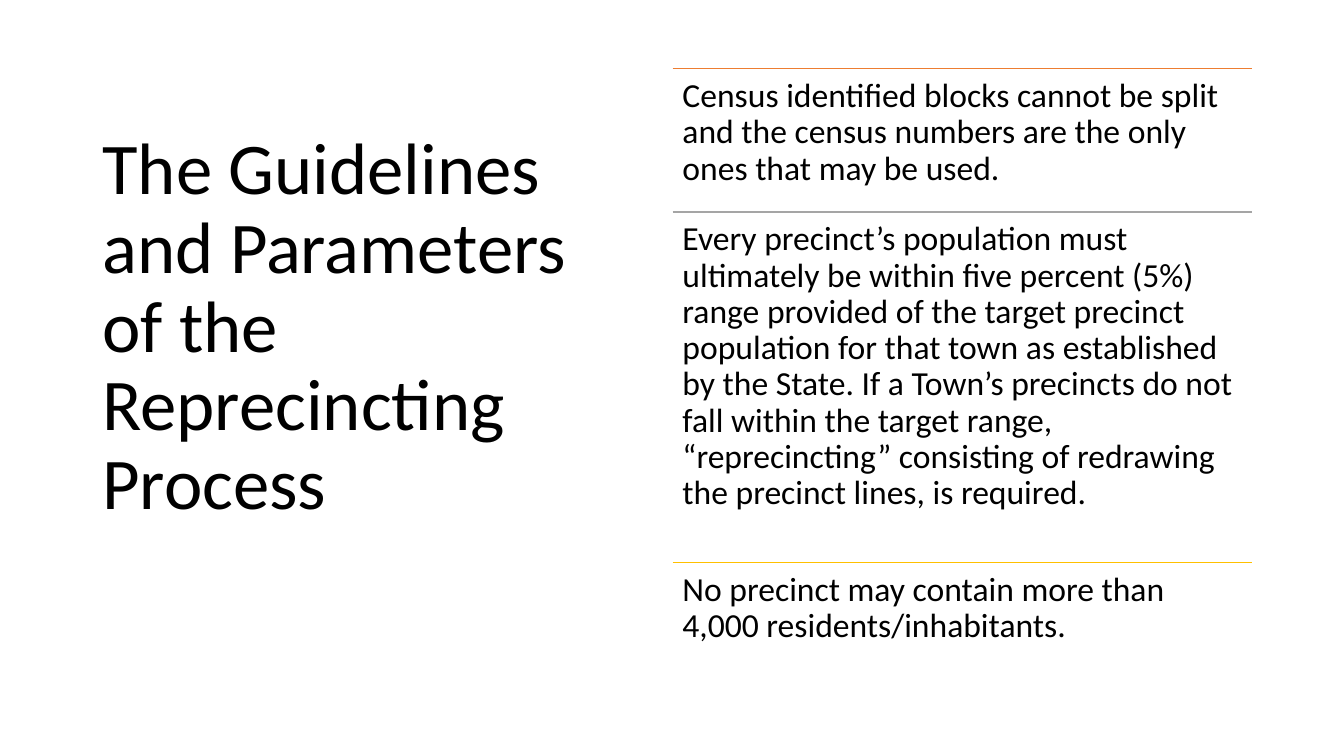
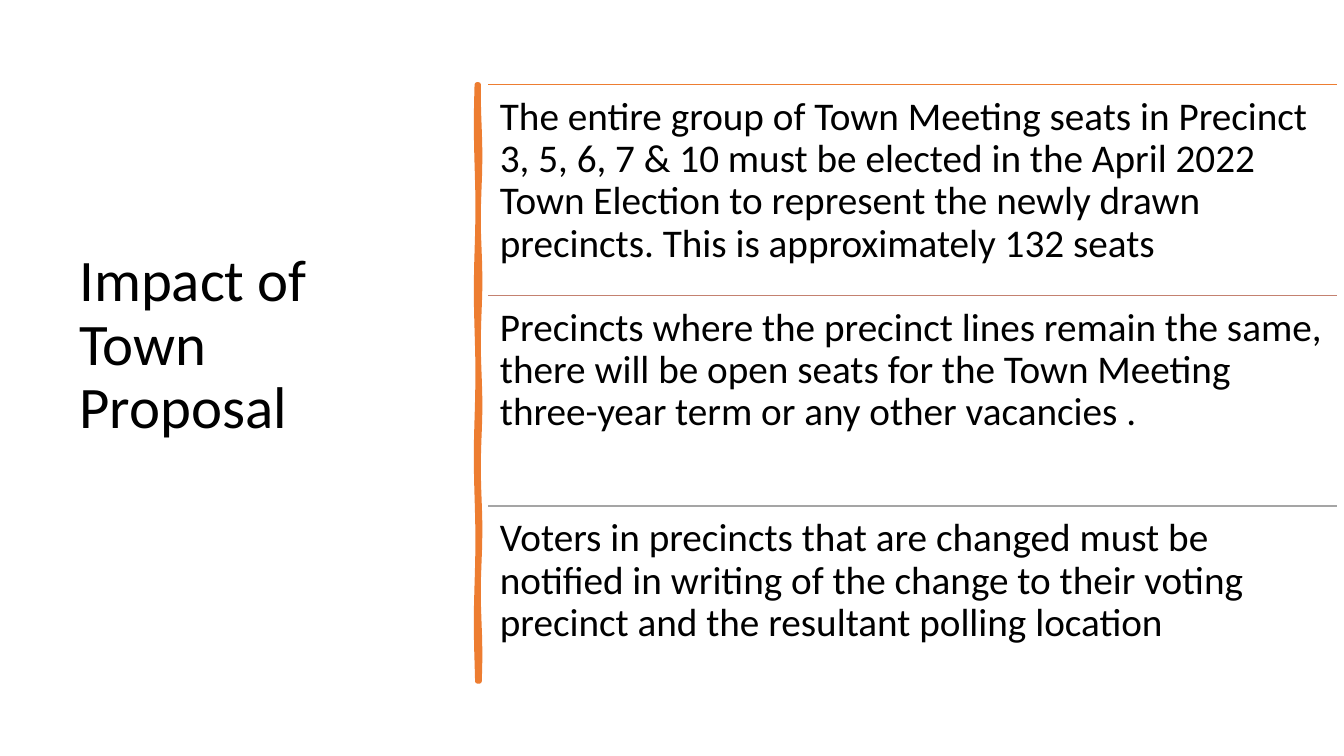
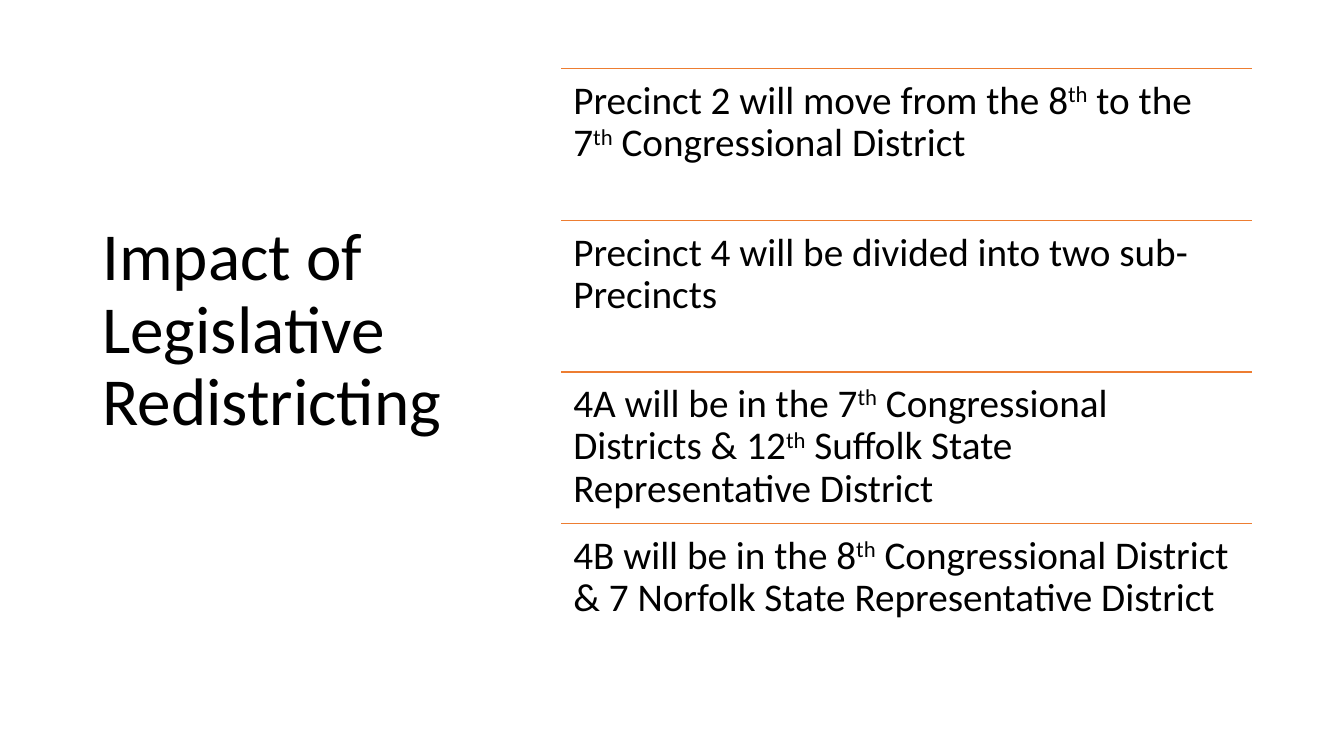
from itertools import pairwise
from math import sin

from lxml.etree import SubElement
from pptx import Presentation
from pptx.dml.color import RGBColor
from pptx.enum.shapes import MSO_CONNECTOR
from pptx.enum.text import MSO_ANCHOR, MSO_AUTO_SIZE, PP_ALIGN
from pptx.oxml.ns import qn
from pptx.util import Cm, Pt

FONT = "Calibri"
BLACK, ORANGE, ROSE, GRAY, GOLD = "000000", "ED7D31", "C48170", "A5A5A5", "FFC000"
LINE_SPACING = 0.9


def rgb(color):
    return RGBColor.from_string(color)


def write(tf, text, size, color=BLACK, anchor=MSO_ANCHOR.TOP):
    """Fill a frame with one paragraph; text between carets is superscript."""
    tf.word_wrap = True
    tf.auto_size = MSO_AUTO_SIZE.NONE
    tf.vertical_anchor = anchor
    p = tf.paragraphs[0]
    p.alignment = PP_ALIGN.LEFT
    p.line_spacing = LINE_SPACING
    for line_no, line in enumerate(text.split("\n")):
        if line_no:
            p.add_line_break()
        for i, part in enumerate(line.split("^")):
            r = p.add_run()
            r.text = part
            r.font.name, r.font.size = FONT, Pt(size)
            r.font.color.rgb = rgb(color)
            if i % 2:
                r.font._element.set("baseline", "30000")


class Deck:
    def __init__(self):
        self.prs = Presentation()
        self.prs.slide_width, self.prs.slide_height = Cm(33.87), Cm(19.05)
        self.s = None

    def slide(self, title, left, top, width, height, size):
        """Start a slide whose title sits half a line above the middle of its box."""
        self.s = self.prs.slides.add_slide(self.prs.slide_layouts[5])
        sp = self.s.shapes.title
        sp.left, sp.top, sp.width, sp.height = Cm(left), Cm(top), Cm(width), Cm(height)
        tf = sp.text_frame
        tf.margin_left = tf.margin_right = Cm(0.25)
        tf.margin_top = Cm(0.13)
        tf.margin_bottom = Cm(0.13) + Pt(size * 1.22 * LINE_SPACING)
        write(tf, title, size, anchor=MSO_ANCHOR.MIDDLE)

    def rule(self, left, top, width, color):
        line = self.s.shapes.add_connector(
            MSO_CONNECTOR.STRAIGHT, Cm(left), Cm(top), Cm(left + width), Cm(top))
        line.line.color.rgb = rgb(color)
        line.line.width = Pt(1)
        SubElement(line._element.spPr, qn("a:effectLst"))

    def sections(self, left, width, edges, items, size, inset):
        """Stack (colour, text) items between successive edges, a rule above each."""
        for (top, bottom), (color, text) in zip(pairwise(edges), items):
            self.rule(left, top, width, color)
            sp = self.s.shapes.add_textbox(Cm(left), Cm(top), Cm(width), Cm(bottom - top))
            tf = sp.text_frame
            tf.margin_left = tf.margin_right = tf.margin_top = tf.margin_bottom = Cm(inset)
            write(tf, text, size)

    def brush_stroke(self, center, top, bottom, color, steps=40):
        """Draw a vertical bar with slightly wavy edges."""
        ys = [top + (bottom - top) * i / steps for i in range(steps + 1)]
        right = [(center + 0.03 + 0.02 * sin(2 * y), y) for y in ys]
        left = [(center - 0.03 + 0.02 * sin(1.5 * y), y) for y in reversed(ys)]
        points = [(Cm(x), Cm(y)) for x, y in right + left]
        builder = self.s.shapes.build_freeform(*points[0])
        builder.add_line_segments(points[1:])
        sp = builder.convert_to_shape()
        sp.shadow.inherit = False
        sp.fill.solid()
        sp.fill.fore_color.rgb = rgb(color)
        sp.line.color.rgb = rgb(color)
        sp.line.width = Pt(3.25)


def even_edges(top, pitch, count):
    return [top + pitch * i for i in range(count + 1)]


def main():
    deck = Deck()

    deck.slide("The Guidelines and Parameters of the Reprecincting Process",
               2.33, 1.55, 13.52, 15.47, size=52)
    deck.sections(16.95, 14.6, [1.73, 5.34, 14.17, 17.02], [
        (ORANGE, "Census identified blocks cannot be split and the census numbers "
                 "are the only ones that may be used."),
        (GRAY, "Every precinct’s population must ultimately be within five percent (5%) "
               "range provided of the target precinct population for that town as "
               "established by the State. If a Town’s precincts do not fall within the "
               "target range, “reprecincting” consisting of redrawing the precinct "
               "lines, is required."),
        (GOLD, "No precinct may contain more than 4,000 residents/inhabitants."),
    ], size=24, inset=0.25)

    deck.slide("Impact of Town\nProposal", 1.75, 1.78, 9.5, 15.52, size=42)
    deck.brush_stroke(12.05, 2.13, 17.17, ORANGE)
    deck.sections(12.3, 21.4, even_edges(2.13, 5.31, 3), [
        (ORANGE, "The entire group of Town Meeting seats in Precinct 3, 5, 6, 7 & 10 must "
                 "be elected in the April 2022 Town Election to represent the newly drawn "
                 "precincts. This is approximately 132 seats"),
        (ROSE, "Precincts where the precinct lines remain the same, there will be open "
               "seats for the Town Meeting three-year term or any other vacancies ."),
        (GRAY, "Voters in precincts that are changed must be notified in writing of the "
               "change to their voting precinct and the resultant polling location"),
    ], size=28, inset=0.3)

    deck.slide("Impact of Legislative Redistricting", 2.33, 1.55, 9.37, 15.47, size=48)
    districts = [
        "Precinct 2 will move from the 8^th^ to the 7^th^ Congressional District",
        "Precinct 4 will be divided into two sub-Precincts",
        "4A will be in the 7^th^ Congressional Districts & 12^th^ Suffolk State "
        "Representative District",
        "4B will be in the 8^th^ Congressional District & 7 Norfolk State "
        "Representative District",
    ]
    deck.sections(14.15, 17.4, even_edges(1.73, 3.82, 4),
                  [(ORANGE, text) for text in districts], size=28, inset=0.3)

    deck.prs.save("out.pptx")


if __name__ == "__main__":
    main()
